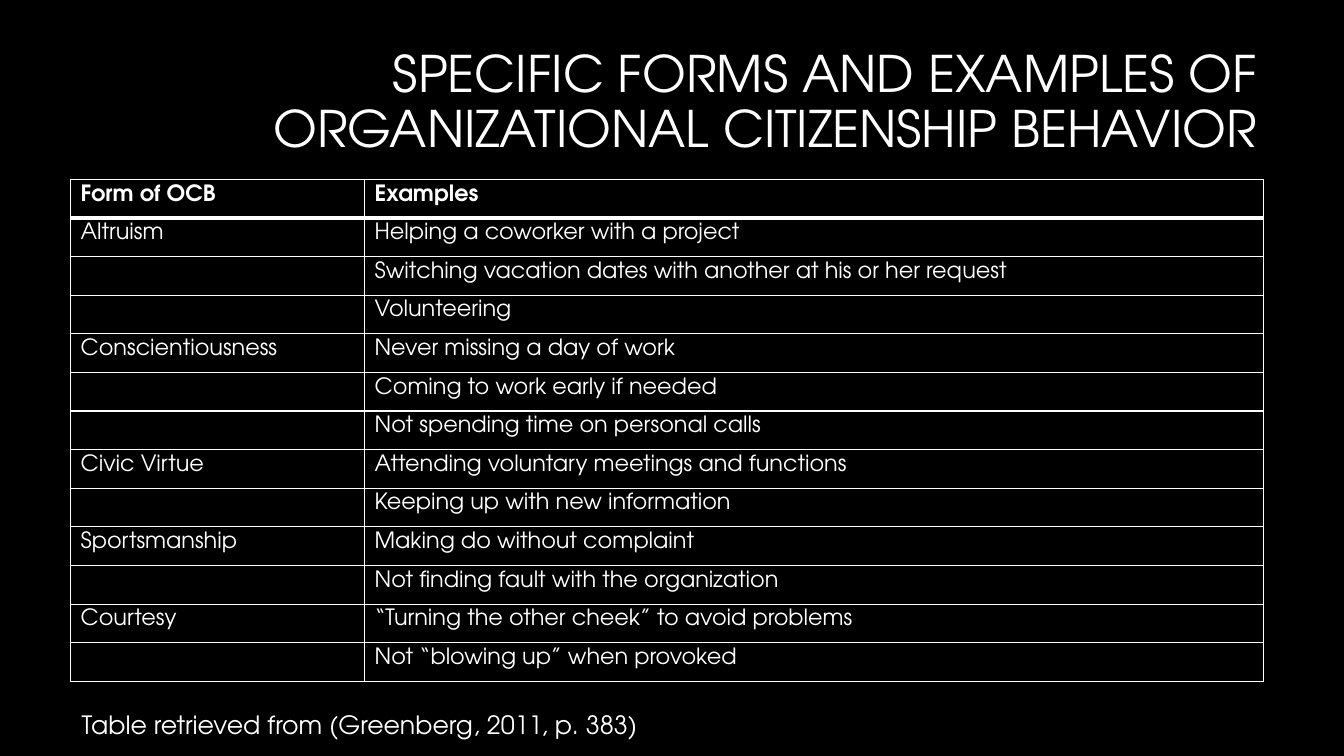
"""Build the slide on forms and examples of organizational citizenship behavior."""
from dataclasses import dataclass

from lxml import etree
from pptx import Presentation
from pptx.dml.color import RGBColor
from pptx.enum.text import MSO_ANCHOR, MSO_AUTO_SIZE, PP_ALIGN
from pptx.oxml.ns import qn
from pptx.util import Cm, Pt

ANCHOR_TOP = MSO_ANCHOR.TOP
ANCHOR_MIDDLE = MSO_ANCHOR.MIDDLE
NO_AUTOFIT = MSO_AUTO_SIZE.NONE
ALIGN_LEFT = PP_ALIGN.LEFT
ALIGN_RIGHT = PP_ALIGN.RIGHT
TITLE_ONLY = 5


@dataclass(frozen=True)
class Theme:
    font: str = "TeX Gyre Adventor"
    background: str = "000000"
    foreground: str = "FFFFFF"
    title_size: float = 36
    table_size: float = 16
    note_size: float = 18
    border: float = 1
    header_border: float = 3


@dataclass(frozen=True)
class Box:
    left: float
    top: float
    width: float
    height: float

    def lengths(self) -> tuple:
        return Cm(self.left), Cm(self.top), Cm(self.width), Cm(self.height)


@dataclass(frozen=True)
class Behavior:
    form: str
    examples: tuple[str, ...]


THEME = Theme()
TITLE_BOX = Box(5.92, 0.82, 26.01, 3.58)
TABLE_BOX = Box(1.78, 4.52, 30.07, 12.65)
NOTE_BOX = Box(1.81, 17.75, 18.03, 1.02)
FORM_WIDTH = 7.41
CELL_MARGIN = 0.13
TITLE = "SPECIFIC FORMS AND EXAMPLES OF ORGANIZATIONAL CITIZENSHIP BEHAVIOR"
NOTE = "Table retrieved from (Greenberg, 2011, p. 383)"
HEADER = ("Form of OCB", "Examples")
BEHAVIORS = (
    Behavior("Altruism", (
        "Helping a coworker with a project",
        "Switching vacation dates with another at his or her request",
        "Volunteering",
    )),
    Behavior("Conscientiousness", (
        "Never missing a day of work",
        "Coming to work early if needed",
        "Not spending time on personal calls",
    )),
    Behavior("Civic Virtue", (
        "Attending voluntary meetings and functions",
        "Keeping up with new information",
    )),
    Behavior("Sportsmanship", (
        "Making do without complaint",
        "Not finding fault with the organization",
    )),
    Behavior("Courtesy", (
        "“Turning the other cheek” to avoid problems",
        "Not “blowing up” when provoked",
    )),
)


def write(text_frame, text: str, size: float, align=ALIGN_LEFT, bold: bool = False) -> None:
    paragraph = text_frame.paragraphs[0]
    paragraph.alignment = align
    run = paragraph.add_run()
    run.text = text
    run.font.name = THEME.font
    run.font.size = Pt(size)
    run.font.bold = bold
    run.font.color.rgb = RGBColor.from_string(THEME.foreground)


def add_title(slide) -> None:
    title = slide.shapes.title
    title.left, title.top, title.width, title.height = TITLE_BOX.lengths()
    text_frame = title.text_frame
    text_frame.word_wrap = True
    text_frame.auto_size = NO_AUTOFIT
    text_frame.vertical_anchor = ANCHOR_MIDDLE
    write(text_frame, TITLE, THEME.title_size, ALIGN_RIGHT)
    text_frame.paragraphs[0].line_spacing = 0.9


def add_note(slide) -> None:
    text_frame = slide.shapes.add_textbox(*NOTE_BOX.lengths()).text_frame
    text_frame.word_wrap = True
    write(text_frame, NOTE, THEME.note_size)


def set_borders(cell, top: float, bottom: float) -> None:
    properties = cell._tc.get_or_add_tcPr()
    widths = {"a:lnL": THEME.border, "a:lnR": THEME.border, "a:lnT": top, "a:lnB": bottom}
    for tag, width in widths.items():
        line = etree.SubElement(properties, qn(tag), w=str(Pt(width)))
        fill = etree.SubElement(line, qn("a:solidFill"))
        etree.SubElement(fill, qn("a:srgbClr"), val=THEME.foreground)


def add_behavior_table(slide) -> None:
    rows = [HEADER] + [
        (behavior.form if index == 0 else "", example)
        for behavior in BEHAVIORS
        for index, example in enumerate(behavior.examples)
    ]
    table = slide.shapes.add_table(len(rows), len(HEADER), *TABLE_BOX.lengths()).table
    table.horz_banding = False
    table.columns[0].width = Cm(FORM_WIDTH)
    table.columns[1].width = Cm(TABLE_BOX.width - FORM_WIDTH)
    for row_index, texts in enumerate(rows):
        top = THEME.header_border if row_index == 1 else THEME.border
        bottom = THEME.header_border if row_index == 0 else THEME.border
        for column_index, text in enumerate(texts):
            cell = table.cell(row_index, column_index)
            cell.margin_top = Cm(CELL_MARGIN)
            cell.margin_bottom = Cm(0)
            cell.vertical_anchor = ANCHOR_TOP
            set_borders(cell, top, bottom)
            cell.fill.solid()
            cell.fill.fore_color.rgb = RGBColor.from_string(THEME.background)
            if text:
                write(cell.text_frame, text, THEME.table_size, bold=row_index == 0)


def main() -> None:
    presentation = Presentation()
    presentation.slide_width = Cm(33.87)
    presentation.slide_height = Cm(19.05)
    slide = presentation.slides.add_slide(presentation.slide_layouts[TITLE_ONLY])
    slide.background.fill.solid()
    slide.background.fill.fore_color.rgb = RGBColor.from_string(THEME.background)
    add_title(slide)
    add_behavior_table(slide)
    add_note(slide)
    presentation.save("out.pptx")


if __name__ == "__main__":
    main()
